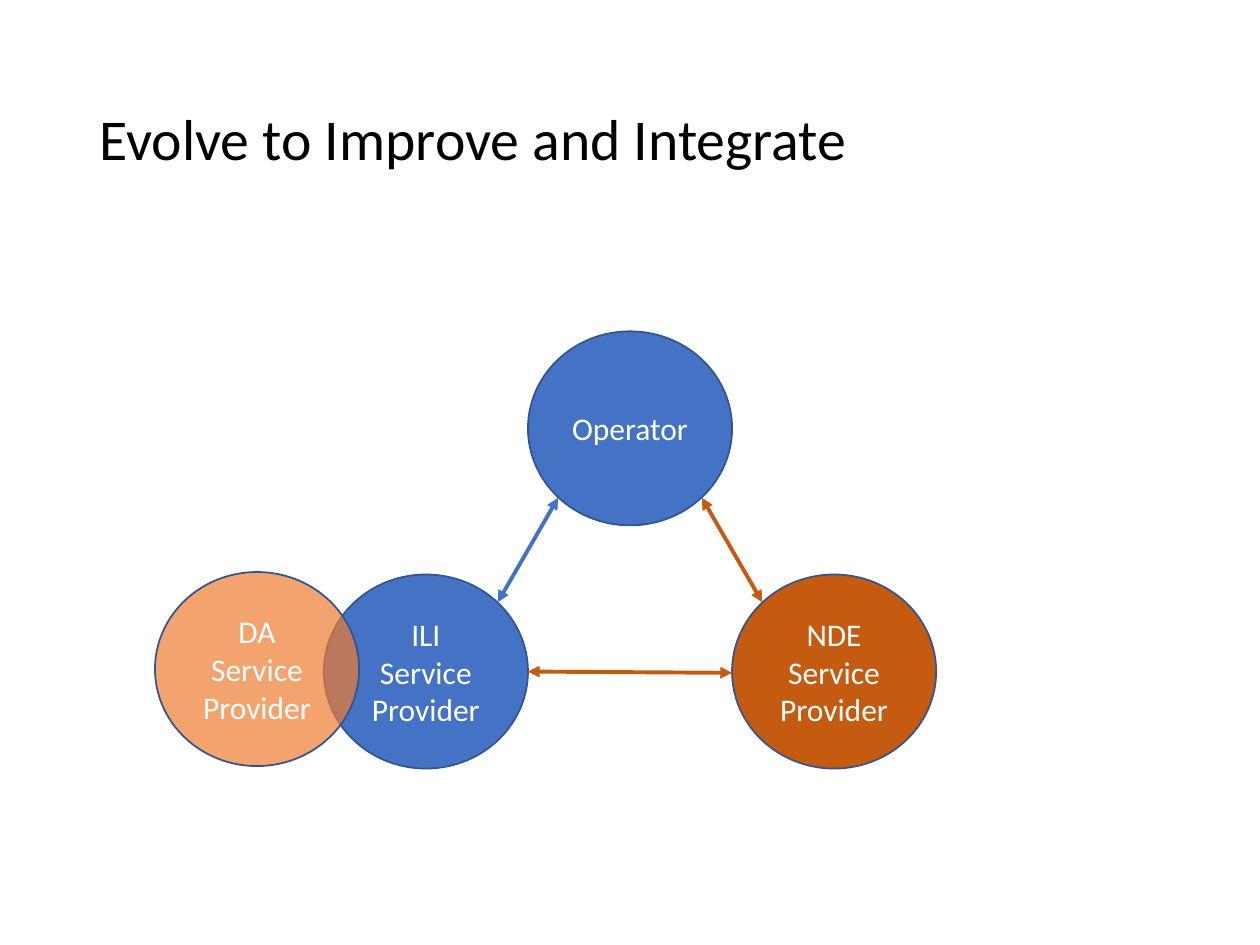
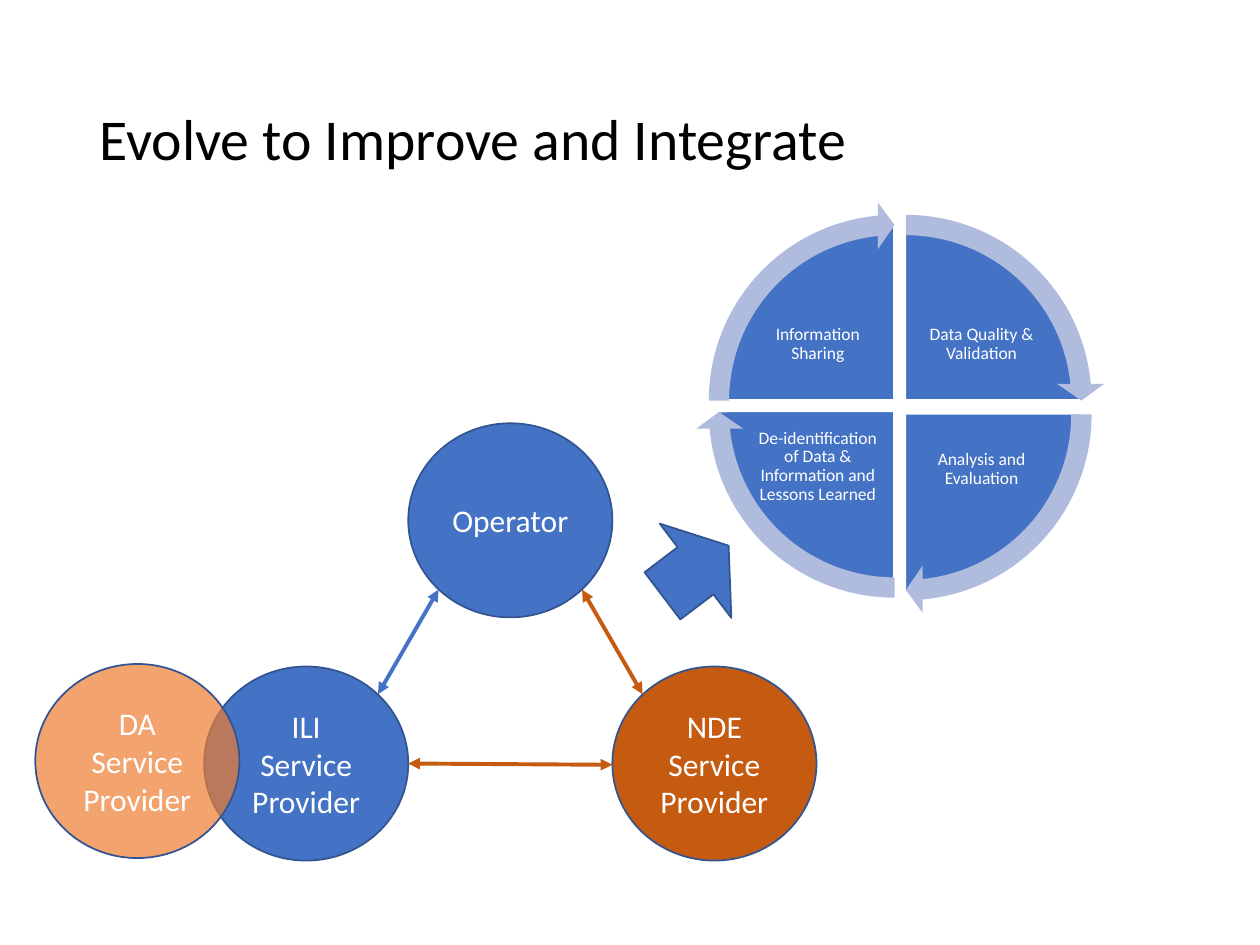
from lxml import etree
from pptx import Presentation
from pptx.dml.color import RGBColor
from pptx.enum import shapes, text
from pptx.oxml import ns
from pptx.util import Inches, Pt

BLUE = RGBColor(0x44, 0x72, 0xC4)
OUTLINE = RGBColor(0x32, 0x54, 0x91)
RUST = RGBColor(0xC5, 0x5A, 0x11)
ORANGE = RGBColor(0xED, 0x7D, 0x31)
PALE_BLUE = RGBColor(0xB0, 0xBC, 0xDE)
WHITE = RGBColor(0xFF, 0xFF, 0xFF)
BLACK = RGBColor(0, 0, 0)

PRESET = shapes.MSO_SHAPE
TITLE = "Evolve to Improve and Integrate"
CIRCLE_W, CIRCLE_H = 1.62, 1.54
PIE_SIZE, RING_SIZE = 2.81, 3.16
RING_GAP = 0.17
FULL_TURN, QUARTER = 216, 54

CYCLE = [
    ("Data Quality & Validation", 162, (5.78, 1.77), (7.27, 2.35)),
    ("Analysis and Evaluation", 0, (5.78, 1.88), (7.27, 3.34)),
    ("De-identification of Data & Information and Lessons Learned", 54,
     (5.69, 1.86), (5.97, 3.32)),
    ("Information Sharing", 108, (5.69, 1.77), (5.97, 2.35)),
]


class Deck:
    font = "Calibri"

    def __init__(self):
        self.prs = Presentation()
        self.prs.slide_width, self.prs.slide_height = Inches(10), Inches(7.5)
        self.canvas = None

    def new_slide(self, title):
        self.slide = self.prs.slides.add_slide(self.prs.slide_layouts[6])
        self.canvas = self.slide.shapes
        self.label(title, (0.69, 0.4, 8.62, 1.45), 33, BLACK,
                   text.PP_ALIGN.LEFT)

    def start_group(self):
        self.canvas = self.slide.shapes.add_group_shape().shapes

    def end_group(self):
        self.canvas = self.slide.shapes

    def set_words(self, frame, words, size, colour, align, spacing=None):
        frame.word_wrap = True
        frame.vertical_anchor = text.MSO_ANCHOR.MIDDLE
        paragraph = frame.paragraphs[0]
        paragraph.alignment = align
        paragraph.line_spacing = spacing
        run = paragraph.add_run()
        run.text = words
        run.font.name = self.font
        run.font.size = Pt(size)
        run.font.color.rgb = colour

    def label(self, words, box, size, colour,
              align=text.PP_ALIGN.CENTER, inset=None):
        frame = self.canvas.add_textbox(*map(Inches, box)).text_frame
        if inset is not None:
            frame.margin_left = frame.margin_right = Inches(inset)
            frame.margin_top = frame.margin_bottom = Inches(inset)
        self.set_words(frame, words, size, colour, align, 0.9)

    def shape(self, preset, box, fill, outline=None, adjust=(), opacity=None):
        figure = self.canvas.add_shape(preset, *map(Inches, box))
        figure.shadow.inherit = False
        figure.fill.solid()
        figure.fill.fore_color.rgb = fill
        if opacity is not None:
            colour = figure._element.spPr.find(".//" + ns.qn("a:srgbClr"))
            etree.SubElement(colour, ns.qn("a:alpha"), val=str(opacity * 1000))
        if outline is None:
            figure.line.fill.background()
        else:
            figure.line.color.rgb = outline
            figure.line.width = Pt(1)
        for index, value in enumerate(adjust):
            figure.adjustments[index] = value
        return figure

    def circle(self, words, left, top, fill, opacity=None):
        party = self.shape(PRESET.OVAL, (left, top, CIRCLE_W, CIRCLE_H),
                           fill, OUTLINE, opacity=opacity)
        self.set_words(party.text_frame, words, 18, WHITE,
                       text.PP_ALIGN.CENTER)

    def double_arrow(self, start, end, colour):
        link = self.canvas.add_connector(
            shapes.MSO_CONNECTOR.STRAIGHT, *map(Inches, (*start, *end)))
        link.line.color.rgb = colour
        link.line.width = Pt(2.25)
        properties = link._element.spPr
        stroke = properties.find(ns.qn("a:ln"))
        for tip in ("a:headEnd", "a:tailEnd"):
            etree.SubElement(stroke, ns.qn(tip), type="triangle")
        etree.SubElement(properties, ns.qn("a:effectLst"))

    def parties(self, dx=0, dy=0):
        def at(x, y):
            return x + dx, y + dy

        self.circle("Operator", *at(4.19, 2.63), BLUE)
        self.circle("ILI Service Provider", *at(2.57, 4.56), BLUE)
        self.circle("NDE Service Provider", *at(5.81, 4.56), RUST)
        self.double_arrow(at(3.95, 4.78), at(4.43, 3.95), BLUE)
        self.double_arrow(at(4.19, 5.33), at(5.81, 5.34), RUST)
        self.double_arrow(at(5.57, 3.95), at(6.05, 4.78), RUST)
        self.circle("DA Service Provider", *at(1.23, 4.54), ORANGE, opacity=70)

    def cycle(self, stages):
        self.start_group()
        for words, start, (left, top), label_at in stages:
            self.shape(PRESET.PIE, (left, top, PIE_SIZE, PIE_SIZE), BLUE,
                       WHITE, (start, (start + QUARTER) % FULL_TURN))
            self.label(words, (*label_at, 1.04, 0.77), 10, WHITE, inset=0.01)
        for _, start, (left, top), _ in stages:
            self.shape(PRESET.CIRCULAR_ARROW,
                       (left - RING_GAP, top - RING_GAP, RING_SIZE, RING_SIZE),
                       PALE_BLUE,
                       adjust=(0.051, 3.275, start + 50.725, start, 0.059))
        self.end_group()


def main():
    deck = Deck()
    deck.new_slide(TITLE)
    deck.parties()

    deck.new_slide(TITLE)
    deck.parties(dx=-0.95, dy=0.73)
    deck.cycle(CYCLE)
    toward_cycle = deck.shape(PRESET.UP_ARROW, (5.05, 4.2, 0.94, 0.66),
                              BLUE, OUTLINE)
    toward_cycle.rotation = 52.8

    deck.prs.save("out.pptx")


if __name__ == "__main__":
    main()
